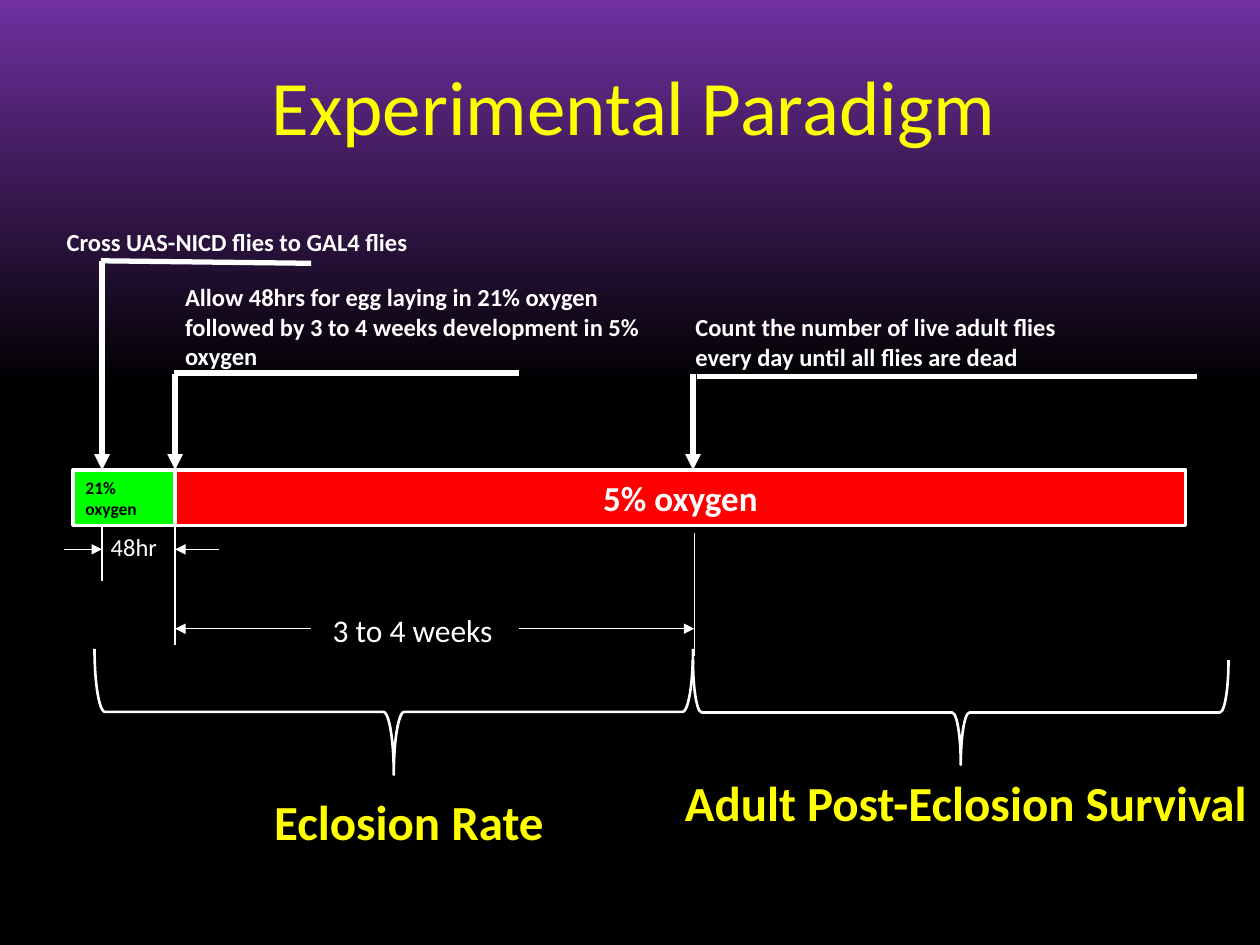
from dataclasses import dataclass

from pptx import Presentation
from pptx.dml.color import RGBColor
from pptx.enum.shapes import MSO_CONNECTOR, MSO_SHAPE
from pptx.enum.text import MSO_ANCHOR, PP_ALIGN
from pptx.oxml.ns import qn
from pptx.util import Inches, Pt
from lxml.etree import SubElement


@dataclass(frozen=True)
class Theme:
    font: str = "Calibri"
    white: str = "FFFFFF"
    black: str = "000000"
    yellow: str = "FFFF00"
    green: str = "00FF00"
    red: str = "FF0000"
    purple: str = "7030A0"
    title: int = 44
    phase: int = 28
    bar: int = 20
    span: int = 18
    note: int = 14
    small: int = 10
    thin: float = 0.75
    brace: float = 1.5
    border: float = 2
    thick: float = 3


@dataclass(frozen=True)
class Box:
    left: float
    top: float
    width: float
    height: float

    def inside(self, left, top, width, height):
        return Box(self.left + left, self.top + top, width, height)

    def lengths(self):
        return [Inches(value) for value in (self.left, self.top, self.width, self.height)]


THEME = Theme()


def apply(target, values):
    for name, value in values.items():
        setattr(target, name, value)


def write(shape, text, size, color=THEME.white, bold=False,
          align=PP_ALIGN.LEFT, anchor=MSO_ANCHOR.TOP):
    frame = shape.text_frame
    apply(frame, {"text": text, "word_wrap": True, "vertical_anchor": anchor})
    paragraph = frame.paragraphs[0]
    paragraph.alignment = align
    font = paragraph.runs[0].font
    apply(font, {"name": THEME.font, "size": Pt(size), "bold": bold})
    font.color.rgb = RGBColor.from_string(color)


def add_text(slide, box, text, size, **style):
    write(slide.shapes.add_textbox(*box.lengths()), text, size, **style)


def set_line(line, width):
    line.color.rgb = RGBColor.from_string(THEME.white)
    line.width = Pt(width)


def add_line(slide, box, start, end, width=THEME.thin, arrow=False):
    points = [Inches(value) for x, y in (start, end)
              for value in (box.left + x, box.top + y)]
    connector = slide.shapes.add_connector(MSO_CONNECTOR.STRAIGHT, *points)
    set_line(connector.line, width)
    if arrow:
        SubElement(connector.line._get_or_add_ln(), qn("a:tailEnd"), type="triangle")
    SubElement(connector._element.spPr, qn("a:effectLst"))


def add_background(slide):
    fill = slide.background.fill
    fill.gradient()
    fill.gradient_angle = 90
    stops = ((0.59, THEME.black), (1, THEME.purple))
    for stop, (position, color) in zip(fill.gradient_stops, stops):
        stop.position = position
        stop.color.rgb = RGBColor.from_string(color)


def add_title(slide, box, text):
    title = slide.shapes.title
    apply(title, dict(zip(("left", "top", "width", "height"), box.lengths())))
    write(title, text, THEME.title, color=THEME.yellow,
          align=PP_ALIGN.CENTER, anchor=MSO_ANCHOR.MIDDLE)


def add_bar(slide, box, first_width):
    segments = (
        (0, first_width, THEME.green, "21% oxygen", THEME.small, THEME.black, PP_ALIGN.LEFT),
        (first_width, box.width - first_width, THEME.red, "5% oxygen",
         THEME.bar, THEME.white, PP_ALIGN.CENTER),
    )
    for left, width, fill, text, size, color, align in segments:
        segment = slide.shapes.add_shape(
            MSO_SHAPE.RECTANGLE, *box.inside(left, 0, width, box.height).lengths())
        segment.shadow.inherit = False
        segment.fill.solid()
        segment.fill.fore_color.rgb = RGBColor.from_string(fill)
        set_line(segment.line, THEME.border)
        write(segment, text, size, color=color, bold=True,
              align=align, anchor=MSO_ANCHOR.MIDDLE)


def add_callout(slide, box, text, text_box, rule):
    add_text(slide, box.inside(*text_box), text, THEME.note, bold=True)
    add_line(slide, box, *rule, width=THEME.thick)
    add_line(slide, box, (0, 0), (0, box.height), width=THEME.thick, arrow=True)


def add_durations(slide, box):
    hatch, end = 0.58, box.width
    for x, top, bottom in ((0, 0, 0.5), (hatch, 0, 1.01), (end, 0.12, 1.1)):
        add_line(slide, box, (x, top), (x, bottom))
    short, long = 0.25, 0.88
    for start, tip, y in ((-0.3, 0, short), (0.93, hatch, short),
                          (1.66, hatch, long), (3.31, end, long)):
        add_line(slide, box, (start, y), (tip, y), arrow=True)
    add_text(slide, box.inside(-0.03, 0.06, 0.68, 0.34), "48hr", THEME.note)
    add_text(slide, box.inside(0.83, 0.69, 3.27, 0.4), "3 to 4 weeks",
             THEME.span, align=PP_ALIGN.CENTER)


def add_phase(slide, box, text, text_box):
    unrotated = box.inside((box.width - box.height) / 2, (box.height - box.width) / 2,
                           box.height, box.width)
    brace = slide.shapes.add_shape(MSO_SHAPE.RIGHT_BRACE, *unrotated.lengths())
    brace.rotation = 90
    brace.adjustments[0] = 0.083
    brace.adjustments[1] = 0.5
    brace.shadow.inherit = False
    brace.fill.background()
    set_line(brace.line, THEME.brace)
    add_text(slide, box.inside(*text_box), text, THEME.phase, color=THEME.yellow,
             bold=True, align=PP_ALIGN.CENTER)


def main():
    presentation = Presentation()
    apply(presentation, {"slide_width": Inches(10), "slide_height": Inches(7.5)})
    slide = presentation.slides.add_slide(presentation.slide_layouts[5])
    add_background(slide)
    add_title(slide, Box(1.67, 0.41, 6.72, 0.84), "Experimental Paradigm")
    add_durations(slide, Box(0.81, 4.11, 4.7, 1.1))
    add_bar(slide, Box(0.58, 3.73, 8.83, 0.44), 0.81)
    callouts = (
        (Box(0.81, 2.07, 1.67, 1.66), "Cross UAS-NICD flies to GAL4 flies",
         (-0.38, -0.32, 3.48, 0.34), ((-0.01, 0), (1.66, 0.02))),
        (Box(1.39, 2.97, 2.74, 0.76),
         "Allow 48hrs for egg laying in 21% oxygen followed by "
         "3 to 4 weeks development in 5% oxygen",
         (-0.02, -0.78, 4.21, 1.04), ((-0.01, -0.01), (2.73, -0.01))),
        (Box(5.5, 2.97, 4, 0.76),
         "Count the number of live adult flies every day until all flies are dead",
         (-0.08, -0.54, 3.42, 0.81), ((0.03, 0.02), (4, 0.02))),
    )
    for callout in callouts:
        add_callout(slide, *callout)
    phases = (
        (Box(0.75, 5.15, 4.75, 1), "Eclosion Rate", (0.83, 1.08, 3.33, 0.57)),
        (Box(5.5, 5.24, 4.25, 0.83), "Adult Post-Eclosion Survival",
         (-0.17, 0.84, 4.67, 1.05)),
    )
    for phase in phases:
        add_phase(slide, *phase)
    presentation.save("out.pptx")


if __name__ == "__main__":
    main()
